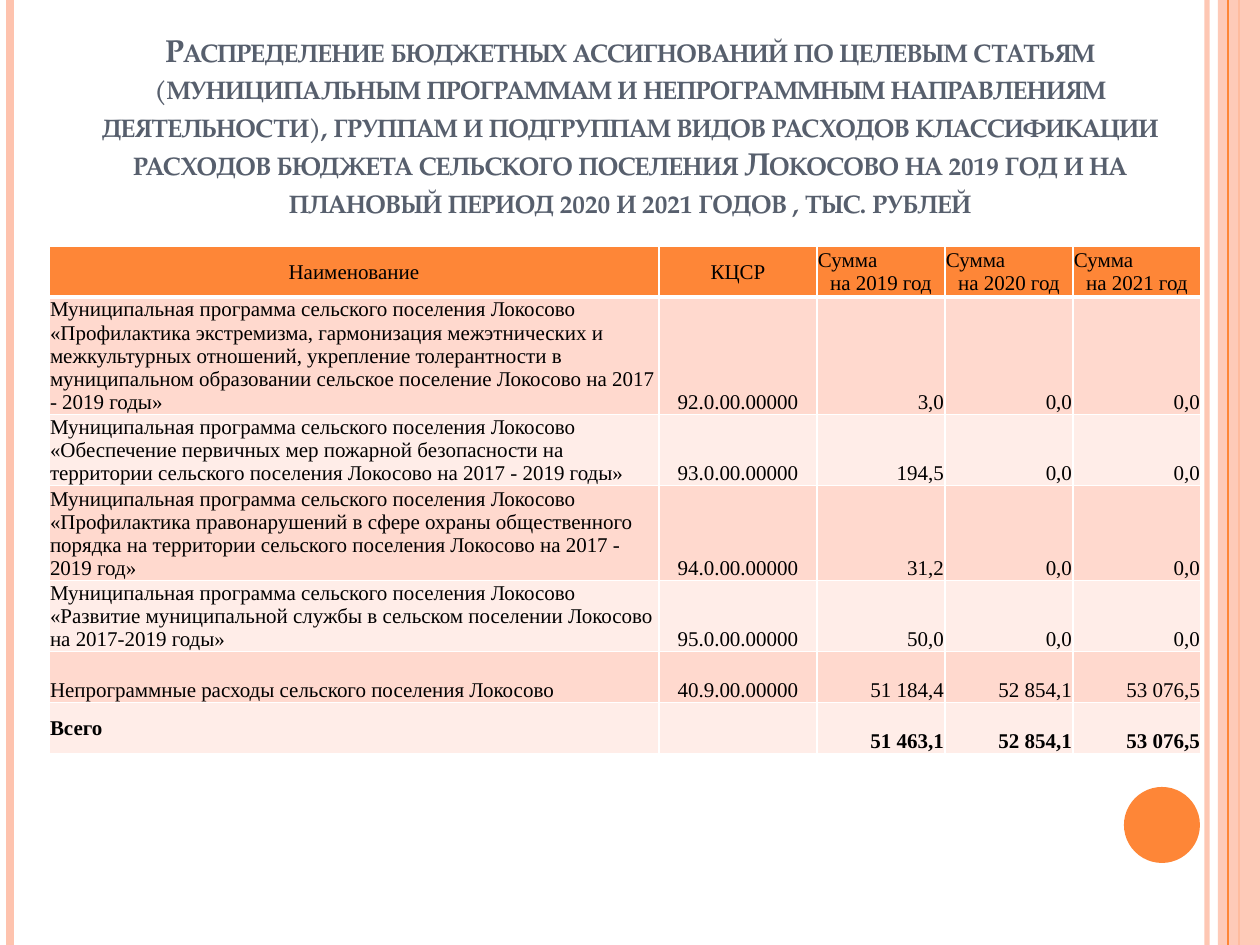
import pptx
import pptx.util
import pptx.dml.color
import pptx.enum.shapes
import pptx.enum.text
import pptx.oxml
import pptx.oxml.ns
import lxml.etree

PX = 914400 / 126
ALIGN = pptx.enum.text.PP_ALIGN
ANCHOR = pptx.enum.text.MSO_ANCHOR
SHAPE = pptx.enum.shapes.MSO_SHAPE
qn = pptx.oxml.ns.qn


def px(*lengths):
    return [pptx.util.Emu(round(length * PX)) for length in lengths]


def color(value):
    return pptx.dml.color.RGBColor.from_string(value)


deck = pptx.Presentation()
deck.slide_width, deck.slide_height = px(1260, 945)
slide = deck.slides.add_slide(deck.slide_layouts[5])
tree = slide.shapes._spTree

heading = slide.shapes.title
heading.left, heading.top, heading.width, heading.height = px(49, 29, 1162, 197)
heading_frame = heading.text_frame
heading_frame.text = (
    "Распределение бюджетных ассигнований по целевым статьям "
    "(муниципальным программам и непрограммным направлениям деятельности), "
    "группам и подгруппам видов расходов классификации расходов бюджета "
    "сельского поселения Локосово на 2019 год и на плановый период "
    "2020 и 2021 годов , тыс. рублей"
)
heading_frame.word_wrap = True
heading_frame.auto_size = pptx.enum.text.MSO_AUTO_SIZE.NONE
heading_frame.vertical_anchor = ANCHOR.BOTTOM
heading_line = heading_frame.paragraphs[0]
heading_line.alignment = ALIGN.CENTER
heading_line.font.name = "TeX Gyre Pagella"
heading_line.font.size = pptx.util.Pt(18)
heading_line.font.bold = True
heading_line.font.color.rgb = color("575F6D")
heading_line._p.pPr.find(qn("a:defRPr")).set("cap", "small")

band = slide.shapes.add_shape(SHAPE.RECTANGLE, *px(1218, 0, 42, 945))
dot = slide.shapes.add_shape(SHAPE.OVAL, *px(1124, 787, 76, 76))
for ornament, fill in [(band, "FEC3AE"), (dot, "FE8637")]:
    ornament.shadow.inherit = False
    ornament.fill.solid()
    ornament.fill.fore_color.rgb = color(fill)
    ornament.line.fill.background()
band_color = band._element.spPr.find(".//" + qn("a:srgbClr"))
lxml.etree.SubElement(band_color, qn("a:alpha"), val="87000")

stripes = [
    (1207, "FEC3AE", 3, 93),
    (10, "FEC3AE", 4.5, 100),
    (1239, "FE8637", 1.5, 100),
    (1228, "FE8637", 0.75, 100),
]
for x, stroke, weight, opacity in stripes:
    stripe = slide.shapes.add_connector(
        pptx.enum.shapes.MSO_CONNECTOR.STRAIGHT, *px(x, 0, x, 945)
    )
    stripe.line.color.rgb = color(stroke)
    stripe.line.width = pptx.util.Pt(weight)
    properties = stripe._element.spPr
    if opacity < 100:
        stroke_color = properties.find(".//" + qn("a:srgbClr"))
        lxml.etree.SubElement(stroke_color, qn("a:alpha"), val=str(opacity * 1000))
    lxml.etree.SubElement(properties, qn("a:effectLst"))
    if x == 1239:
        tree.remove(stripe._element)
        tree.insert(tree.index(band._element), stripe._element)

program = "Муниципальная программа сельского поселения Локосово "
budget = [
    ["Наименование", "КЦСР"]
    + [f"Сумма\nна {year} год" for year in (2019, 2020, 2021)],
    [program + "«Профилактика экстремизма, гармонизация межэтнических и "
     "межкультурных отношений, укрепление толерантности в муниципальном "
     "образовании сельское поселение Локосово на 2017 - 2019 годы»",
     "92.0.00.00000", "3,0", "0,0", "0,0"],
    [program + "«Обеспечение первичных мер пожарной безопасности на "
     "территории сельского поселения Локосово на 2017 - 2019 годы»",
     "93.0.00.00000", "194,5", "0,0", "0,0"],
    [program + "«Профилактика правонарушений в сфере охраны общественного "
     "порядка на территории сельского поселения Локосово на 2017 - 2019 год»",
     "94.0.00.00000", "31,2", "0,0", "0,0"],
    [program + "«Развитие муниципальной службы в сельском поселении "
     "Локосово на 2017-2019 годы»",
     "95.0.00.00000", "50,0", "0,0", "0,0"],
    ["Непрограммные расходы сельского поселения Локосово",
     "40.9.00.00000", "51 184,4", "52 854,1", "53 076,5"],
    ["Всего", "", "51 463,1", "52 854,1", "53 076,5"],
]
column_widths = px(610, 158, 128, 128, 128)
row_heights = px(51, 117, 71, 95, 71, 51, 51)
column_aligns = [ALIGN.LEFT, ALIGN.CENTER] + [ALIGN.RIGHT] * 3
last = len(budget) - 1

table = slide.shapes.add_table(
    len(budget), len(column_widths), *px(49, 246, 1152, 507)
).table
for column, width in zip(table.columns, column_widths):
    column.width = width
for row, height in zip(table.rows, row_heights):
    row.height = height

for r, entries in enumerate(budget):
    for c, entry in enumerate(entries):
        cell = table.cell(r, c)
        cell.text = entry
        cell.margin_left, cell.margin_right, cell.margin_top = px(1, 1, 1)
        cell.margin_bottom = 0
        centred = r == 0 or (r == last and c == 0)
        cell.vertical_anchor = ANCHOR.MIDDLE if centred else ANCHOR.BOTTOM
        for paragraph in cell.text_frame.paragraphs:
            paragraph.alignment = ALIGN.CENTER if r == 0 else column_aligns[c]
            paragraph.font.name = "Times New Roman"
            paragraph.font.size = pptx.util.Pt(12)
            paragraph.font.bold = r == last
            paragraph.font.color.rgb = color("000000")
        if r == 0 and c > 1:
            cell.text_frame.paragraphs[0].alignment = ALIGN.LEFT
        for side in ("lnL", "lnR", "lnT", "lnB"):
            thick = (r, side) in [(0, "lnB"), (1, "lnT")]
            border = lxml.etree.SubElement(
                cell._tc.get_or_add_tcPr(), qn("a:" + side),
                w=str(pptx.util.Pt(3 if thick else 1)),
            )
            ink = lxml.etree.SubElement(border, qn("a:solidFill"))
            lxml.etree.SubElement(ink, qn("a:srgbClr"), val="FFFFFF")
        cell.fill.solid()
        cell.fill.fore_color.rgb = color(
            "FE8637" if r == 0 else "FFD9CE" if r % 2 else "FFEDE8"
        )

deck.save("out.pptx")
